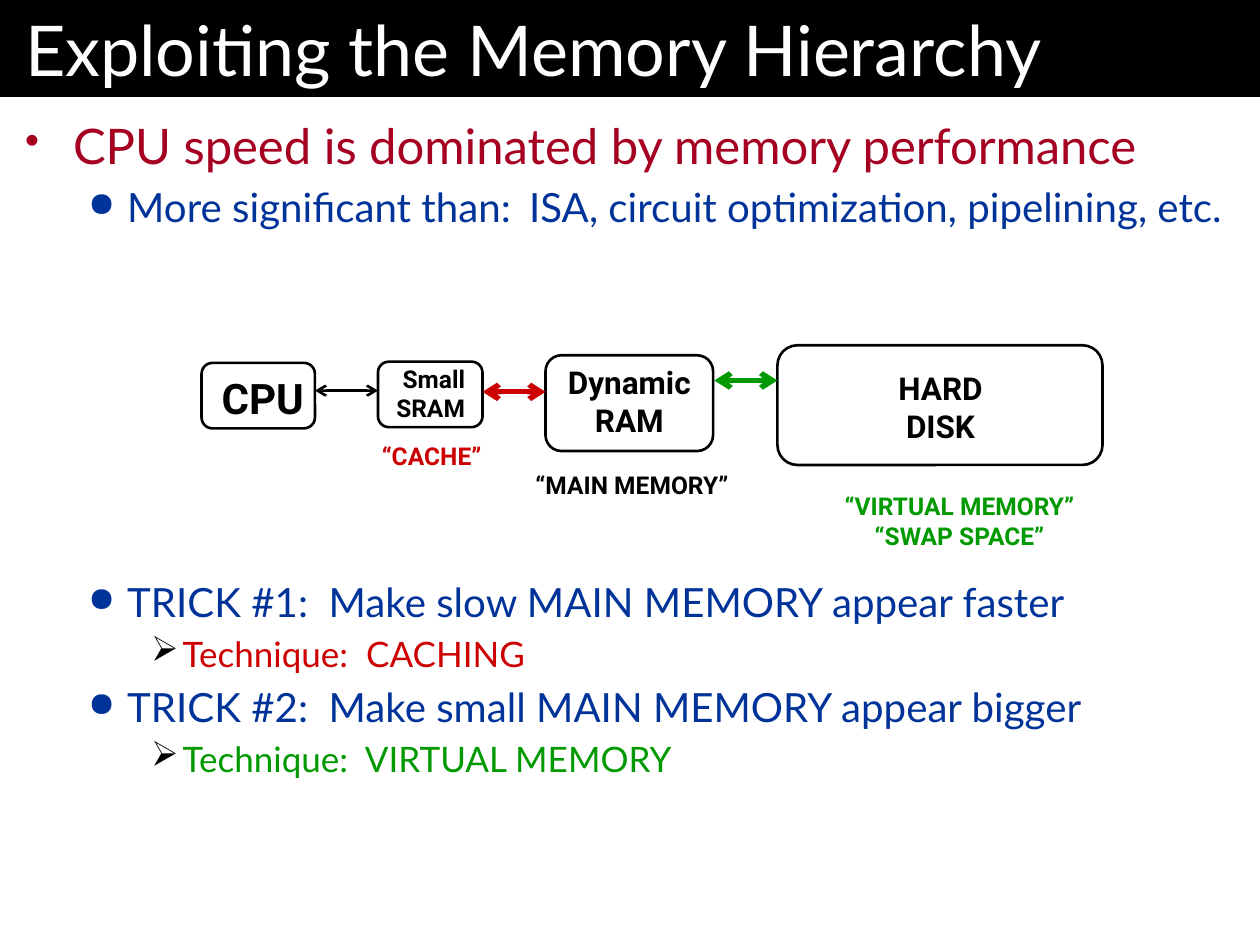
import lxml.etree
import pptx
import pptx.dml.color
import pptx.enum.shapes
import pptx.enum.text
import pptx.oxml.ns
import pptx.util

COLUMNS, ROWS = 100, 75
CELL = pptx.util.Inches(0.1)
COLORS = {
    "black": "000000", "white": "FFFFFF", "crimson": "A50021",
    "blue": "003399", "red": "CC0000", "green": "009900",
}
ALIGN = pptx.enum.text.PP_ALIGN
LEVELS = [
    {"margin": 0.38, "hang": 0.38, "size": 28, "bullet": "•", "bullet_color": "crimson", "share": 85},
    {"margin": 0.81, "hang": 0.31, "size": 23, "bullet": "●", "bullet_color": "blue", "share": 85},
    {"margin": 1.25, "hang": 0.25, "size": 20, "bullet": "➢", "bullet_color": "black", "share": 100},
]
DIAGRAM_GAP = 197.6
OUTLINE = [
    (0, "CPU speed is dominated by memory performance", "crimson", None),
    (1, "More significant than:\tISA, circuit optimization, pipelining, etc.", "blue", None),
    (1, "TRICK #1:  Make slow MAIN MEMORY appear faster", "blue", DIAGRAM_GAP),
    (2, "Technique:  CACHING", "red", None),
    (1, "TRICK #2:  Make small MAIN MEMORY appear bigger", "blue", None),
    (2, "Technique:  VIRTUAL MEMORY", "green", None),
]
MEMORIES = [
    (16, 28.8, 9, 5.2),
    (30, 28.7, 8.3, 5.2),
    (43.3, 28.2, 13.3, 7.6),
    (61.7, 27.4, 25.8, 9.5),
]
LABELS = [
    ((16, 29.1, 9.1, 5.1), ["CPU"], 24, "black", ALIGN.RIGHT),
    ((29.9, 28.4, 8, 5.7), ["Small", "SRAM"], 14, "black", ALIGN.RIGHT),
    ((43.7, 28.3, 12.5, 7.1), ["Dynamic", "RAM"], 18, "black", ALIGN.CENTER),
    ((70, 28.8, 9.3, 7.1), ["HARD", "DISK"], 18, "black", ALIGN.CENTER),
    ((28.1, 34.5, 11.1, 3.4), ["“CACHE”"], 14, "red", ALIGN.RIGHT),
    ((40.4, 36.8, 18.4, 3.4), ["“MAIN MEMORY”"], 14, "black", ALIGN.RIGHT),
    ((65.2, 38.5, 21.9, 5.7), ["“VIRTUAL MEMORY”", "“SWAP SPACE”"], 14, "green", ALIGN.CENTER),
]
BUSES = [(25, 31, "black", 1.5), (38.3, 31.1, "red", 3), (56.7, 30.2, "green", 3)]
BUS_LENGTH = 5


def cells(*counts):
    """Turn counts of grid cells into lengths."""
    return [round(count * CELL) for count in counts]


def rgb(name):
    """Look up a named colour."""
    return pptx.dml.color.RGBColor.from_string(COLORS[name])


def add_node(parent, tag, **attributes):
    """Append a DrawingML element."""
    node = lxml.etree.SubElement(parent, pptx.oxml.ns.qn(tag))
    for key, value in attributes.items():
        node.set(key, value)
    return node


def set_font(paragraph, face, size, color, bold=False):
    """Style a whole paragraph."""
    font = paragraph.font
    font.name, font.size, font.bold = face, pptx.util.Pt(size), bold
    font.color.rgb = rgb(color)


def set_insets(frame, side, end):
    """Set the side and end insets of a text frame in grid cells."""
    frame.margin_left, frame.margin_right = cells(side, side)
    frame.margin_top, frame.margin_bottom = cells(end, end)


def add_title(slide, text):
    """Draw the title band."""
    band = slide.shapes.add_shape(pptx.enum.shapes.MSO_SHAPE.RECTANGLE, *cells(0, 0, COLUMNS, 7.7))
    band.shadow.inherit = False
    band.fill.solid()
    band.fill.fore_color.rgb = rgb("black")
    band.line.fill.background()
    frame = band.text_frame
    frame.word_wrap = True
    frame.vertical_anchor = pptx.enum.text.MSO_ANCHOR.MIDDLE
    set_insets(frame, 2, 0.5)
    heading = frame.paragraphs[0]
    heading.text = text
    heading.alignment = ALIGN.LEFT
    set_font(heading, "Lato", 40, "white")


def add_bullet(paragraph, level):
    """Give a paragraph its indent and bullet."""
    style = LEVELS[level]
    properties = paragraph._p.get_or_add_pPr()
    properties.set("marL", str(pptx.util.Inches(style["margin"])))
    properties.set("indent", str(-pptx.util.Inches(style["hang"])))
    color = add_node(properties, "a:buClr")
    add_node(color, "a:srgbClr", val=COLORS[style["bullet_color"]])
    add_node(properties, "a:buSzPct", val=str(style["share"] * 1000))
    add_node(properties, "a:buChar", char=style["bullet"])


def add_outline(slide, entries):
    """Write the bulleted body text."""
    frame = slide.shapes.add_textbox(*cells(0, 7.7, COLUMNS, ROWS - 7.7)).text_frame
    frame.word_wrap = True
    set_insets(frame, 2, 1.5)
    for index, (level, text, color, gap) in enumerate(entries):
        entry = frame.add_paragraph() if index else frame.paragraphs[0]
        size = LEVELS[level]["size"]
        entry.text = text
        entry.level = level
        entry.space_before = pptx.util.Pt(gap or size * 0.2)
        add_bullet(entry, level)
        set_font(entry, "Lato", size, color)


def add_memory(slide, place):
    """Draw the rounded outline of one stage of the hierarchy."""
    stage = slide.shapes.add_shape(pptx.enum.shapes.MSO_SHAPE.ROUNDED_RECTANGLE, *cells(*place))
    stage.shadow.inherit = False
    stage.fill.background()
    stage.line.color.rgb = rgb("black")
    stage.line.width = pptx.util.Pt(1.5)


def add_label(slide, place, lines, size, color, alignment):
    """Write a bold label in the diagram."""
    frame = slide.shapes.add_textbox(*cells(*place)).text_frame
    frame.word_wrap = False
    frame.auto_size = pptx.enum.text.MSO_AUTO_SIZE.SHAPE_TO_FIT_TEXT
    frame.text = "\n".join(lines)
    for line in frame.paragraphs:
        line.alignment = alignment
        set_font(line, "Roboto", size, color, bold=True)


def add_bus(slide, left, top, color, weight):
    """Draw a two-headed arrow between neighbouring stages."""
    bus = slide.shapes.add_connector(
        pptx.enum.shapes.MSO_CONNECTOR.STRAIGHT, *cells(left, top, left + BUS_LENGTH, top))
    bus.line.color.rgb = rgb(color)
    bus.line.width = pptx.util.Pt(weight)
    outline = bus.line._get_or_add_ln()
    for end in ("a:headEnd", "a:tailEnd"):
        add_node(outline, end, type="arrow")
    add_node(bus._element.spPr, "a:effectLst")


def main():
    """Build and save the slide."""
    deck = pptx.Presentation()
    deck.slide_width, deck.slide_height = cells(COLUMNS, ROWS)
    slide = deck.slides.add_slide(deck.slide_layouts[6])
    add_title(slide, "Exploiting the Memory Hierarchy")
    add_outline(slide, OUTLINE)
    for place in MEMORIES:
        add_memory(slide, place)
    for label in LABELS:
        add_label(slide, *label)
    for bus in BUSES:
        add_bus(slide, *bus)
    deck.save("out.pptx")


if __name__ == "__main__":
    main()
